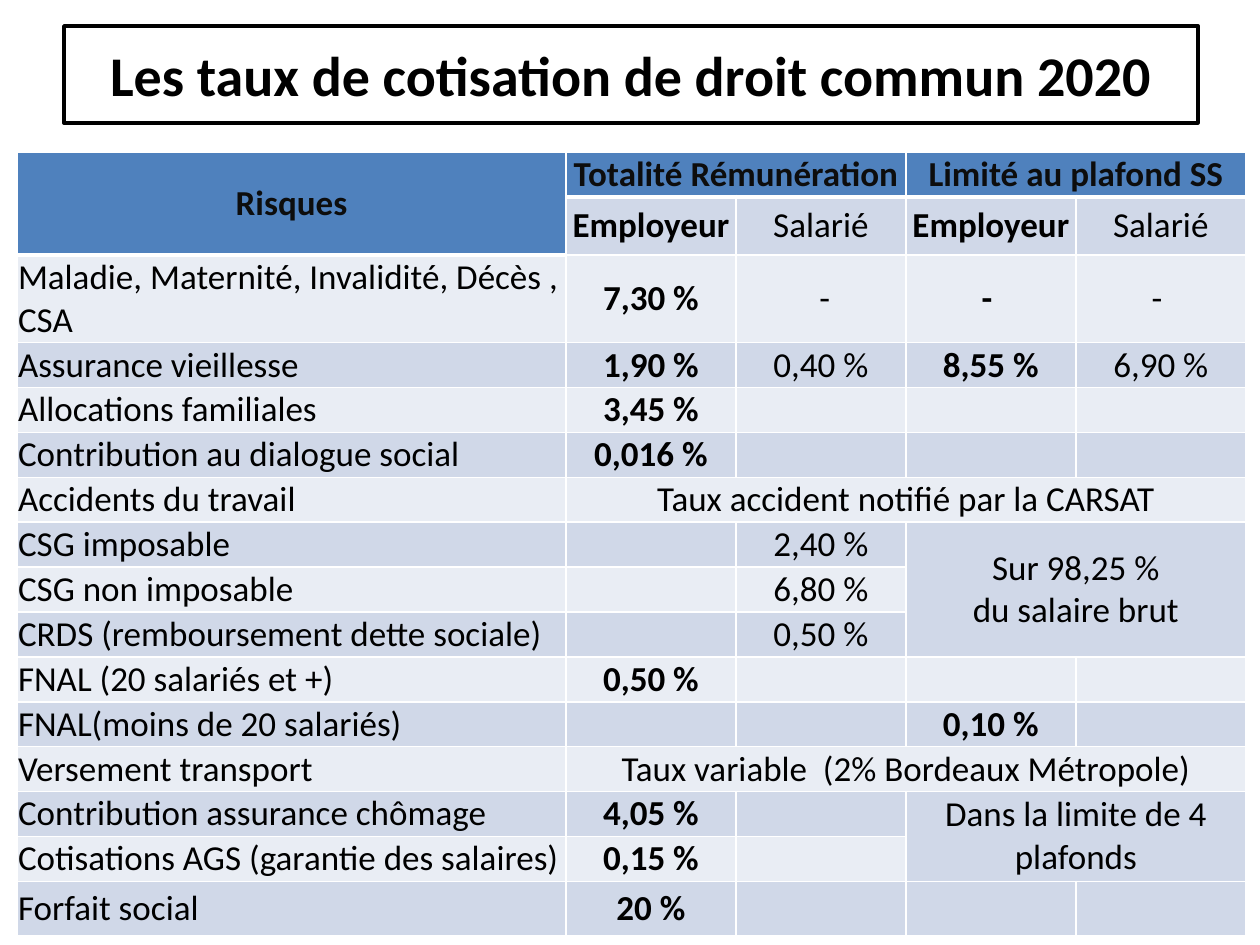
from dataclasses import dataclass

from lxml.etree import SubElement
from pptx import Presentation
from pptx.dml.color import RGBColor
from pptx.enum.text import MSO_ANCHOR, MSO_AUTO_SIZE, PP_ALIGN
from pptx.oxml.ns import qn
from pptx.util import Emu, Pt

EMU_PER_PX = 914400 / 126


def px(length):
    return Emu(round(length * EMU_PER_PX))


@dataclass(frozen=True)
class Theme:
    font: str = "Calibri"
    title_size: int = 32
    table_size: int = 20
    black: str = "000000"
    white: str = "FFFFFF"
    header_text: str = "0D0D0D"
    header_fill: str = "4F81BD"
    bands: tuple = ("E9EDF4", "D0D8E8")
    title_line: int = 2
    cell_line: int = 1
    header_line: int = 3


COLUMN_WIDTHS = [549] + [170] * 4
ROW_HEIGHTS = [44, 58, 87] + [44] * 12 + [54]
EMPLOYER_COLUMNS = (1, 3)
ROWS = [
    ["Risques", "Totalité Rémunération", "", "Limité au plafond SS"],
    ["", "Employeur", "Salarié", "Employeur", "Salarié"],
    ["Maladie, Maternité, Invalidité, Décès , CSA", "7,30 %", " -", "- ", "- "],
    ["Assurance vieillesse", "1,90 %", "0,40 %", "8,55 %", "6,90 %"],
    ["Allocations familiales", "3,45 %"],
    ["Contribution au dialogue social", "0,016 %"],
    ["Accidents du travail", "Taux accident notifié par la CARSAT"],
    ["CSG imposable", "", "2,40 %", "Sur 98,25 %\ndu salaire brut"],
    ["CSG non imposable", "", "6,80 %"],
    ["CRDS (remboursement dette sociale)", "", "0,50 %"],
    ["FNAL (20 salariés et +)", "0,50 %"],
    ["FNAL(moins de 20 salariés)", "", "", "0,10 %"],
    ["Versement transport", "Taux variable  (2% Bordeaux Métropole)"],
    ["Contribution assurance chômage", "4,05 %", "", "Dans la limite de 4 plafonds"],
    ["Cotisations AGS (garantie des salaires)", "0,15 %"],
    ["Forfait social", "20 %"],
]
# (row, column): (rows spanned, columns spanned)
SPANS = {
    (0, 0): (2, 1), (0, 1): (1, 2), (0, 3): (1, 2),
    (6, 1): (1, 4), (7, 3): (3, 2), (12, 1): (1, 4), (13, 3): (2, 2),
}


def is_header(row, column):
    return row == 0 or (row, column) == (1, 0)


class SlideBuilder:
    """Holds the theme and the slide being built."""

    def __init__(self, slide, theme):
        self.slide = slide
        self.theme = theme

    def style_text(self, text_frame, size, color, bold, alignment):
        for paragraph in text_frame.paragraphs:
            paragraph.alignment = alignment
            font = paragraph.font
            font.name, font.size, font.bold = self.theme.font, Pt(size), bold
            font.color.rgb = RGBColor.from_string(color)

    def title(self, text, left, top, width, height):
        theme = self.theme
        shape = self.slide.shapes.title
        shape.left, shape.top = px(left), px(top)
        shape.width, shape.height = px(width), px(height)
        shape.fill.solid()
        shape.fill.fore_color.rgb = RGBColor.from_string(theme.white)
        shape.line.color.rgb = RGBColor.from_string(theme.black)
        shape.line.width = Pt(theme.title_line)
        frame = shape.text_frame
        frame.text = text
        frame.auto_size = MSO_AUTO_SIZE.NONE
        frame.vertical_anchor = MSO_ANCHOR.MIDDLE
        self.style_text(frame, theme.title_size, theme.black, True, PP_ALIGN.CENTER)

    def cell_borders(self, cell, top, bottom):
        properties = cell._tc.get_or_add_tcPr()
        sides = {"L": self.theme.cell_line, "R": self.theme.cell_line, "T": top, "B": bottom}
        for side, width in sides.items():
            line = SubElement(properties, qn(f"a:ln{side}"), w=str(Pt(width)))
            fill = SubElement(line, qn("a:solidFill"))
            SubElement(fill, qn("a:srgbClr"), val=self.theme.white)

    def cell(self, cell, row, column, text):
        theme = self.theme
        header = is_header(row, column)
        below_header = row > 0 and is_header(row - 1, column)
        self.cell_borders(
            cell,
            theme.header_line if below_header else theme.cell_line,
            theme.header_line if header else theme.cell_line,
        )
        cell.fill.solid()
        fill = theme.header_fill if header else theme.bands[row % 2]
        cell.fill.fore_color.rgb = RGBColor.from_string(fill)
        cell.margin_left = cell.margin_right = cell.margin_top = cell.margin_bottom = px(1)
        cell.vertical_anchor = MSO_ANCHOR.MIDDLE
        cell.text = text
        bold = header or (column in EMPLOYER_COLUMNS and (row, column) not in SPANS)
        alignment = PP_ALIGN.LEFT if column == 0 and not header else PP_ALIGN.CENTER
        color = theme.header_text if header else theme.black
        self.style_text(cell.text_frame, theme.table_size, color, bold, alignment)

    def table(self, rows, spans, left, top, column_widths, row_heights):
        table = self.slide.shapes.add_table(
            len(row_heights), len(column_widths), px(left), px(top),
            px(sum(column_widths)), px(sum(row_heights)),
        ).table
        table.first_row = table.horz_banding = False
        for table_column, width in zip(table.columns, column_widths):
            table_column.width = px(width)
        for row, (texts, height) in enumerate(zip(rows, row_heights)):
            table.rows[row].height = px(height)
            for column in range(len(column_widths)):
                text = texts[column] if column < len(texts) else ""
                self.cell(table.cell(row, column), row, column, text)
        for (row, column), (height, width) in spans.items():
            last = table.cell(row + height - 1, column + width - 1)
            table.cell(row, column).merge(last)


def main():
    presentation = Presentation()
    presentation.slide_width, presentation.slide_height = px(1260), px(945)
    slide = presentation.slides.add_slide(presentation.slide_layouts[5])
    builder = SlideBuilder(slide, Theme())
    builder.title("Les taux de cotisation de droit commun 2020", 64, 26, 1134, 97)
    builder.table(ROWS, SPANS, 17, 152, COLUMN_WIDTHS, ROW_HEIGHTS)
    presentation.save("out.pptx")


if __name__ == "__main__":
    main()
